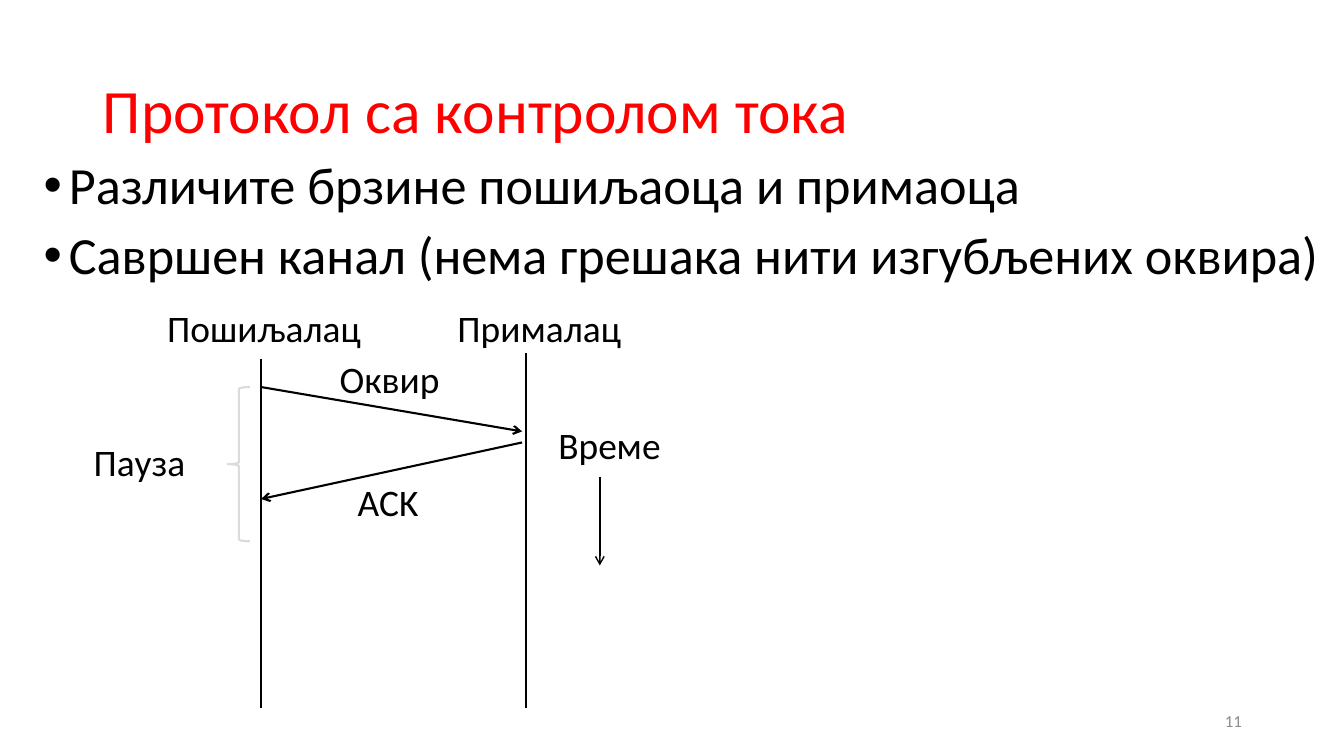
from dataclasses import dataclass

from lxml import etree
from pptx import Presentation
from pptx.dml.color import RGBColor
from pptx.enum.shapes import MSO_CONNECTOR, MSO_SHAPE
from pptx.enum.text import MSO_ANCHOR, MSO_AUTO_SIZE, PP_ALIGN
from pptx.oxml.ns import qn
from pptx.util import Emu, Inches, Pt

STRAIGHT = MSO_CONNECTOR.STRAIGHT
LEFT_BRACE = MSO_SHAPE.LEFT_BRACE
TOP, MIDDLE = MSO_ANCHOR.TOP, MSO_ANCHOR.MIDDLE
LEFT, RIGHT = PP_ALIGN.LEFT, PP_ALIGN.RIGHT
NO_AUTOFIT = MSO_AUTO_SIZE.NONE
SLIDE_WIDTH, SLIDE_HEIGHT = Inches(13.333), Inches(7.5)


@dataclass(frozen=True)
class Theme:
    font: str = "Calibri"
    title_color: RGBColor = RGBColor(0xFF, 0x00, 0x00)
    ink: RGBColor = RGBColor(0x00, 0x00, 0x00)
    brace_color: RGBColor = RGBColor(0xDB, 0xDB, 0xDB)
    number_color: RGBColor = RGBColor(0x8C, 0x8C, 0x8C)
    title_size: float = 44
    body_size: float = 37.3
    label_size: float = 26.7
    number_size: float = 12
    thin: float = 1
    thick: float = 1.5


THEME = Theme()


# Boxes and points are given in percent of the slide's width and height
@dataclass(frozen=True)
class Box:
    left: float
    top: float
    width: float
    height: float


@dataclass(frozen=True)
class Label:
    text: str
    left: float
    top: float
    width: float


@dataclass(frozen=True)
class Line:
    start: tuple[float, float]
    end: tuple[float, float]
    weight: float
    arrow: bool = False


TITLE = "Протокол са контролом тока"
BULLETS = [
    "Различите брзине пошиљаоца и примаоца",
    "Савршен канал (нема грешака нити изгубљених оквира)",
]
TITLE_BOX = Box(6.9, 5.33, 86.25, 19.33)
BODY_BOX = Box(2.5, 20.4, 97.5, 69.6)
NUMBER_BOX = Box(70.65, 92.67, 22.5, 5.33)

SENDER, RECEIVER, RECEIVER_EDGE, TIME_AXIS = 19.43, 39.15, 38.85, 44.63
FRAME_SENT, LIFELINE_END = 51.2, 93.6
HEADING_TOP, LABEL_HEIGHT = 39.73, 7.33
PAUSE_BOX = Box(16.95, FRAME_SENT, 1.65, 20.4)

LINES = [
    Line((SENDER, 47.47), (SENDER, LIFELINE_END), THEME.thin),
    Line((RECEIVER, 46.67), (RECEIVER, LIFELINE_END), THEME.thin),
    Line((SENDER, FRAME_SENT), (RECEIVER_EDGE, 57.07), THEME.thick, True),
    Line((RECEIVER_EDGE, 58.53), (SENDER, 66), THEME.thick, True),
    Line((TIME_AXIS, 63.07), (TIME_AXIS, 74.8), THEME.thin, True),
]
LABELS = [
    Label("Пошиљалац", 11.7, HEADING_TOP, 16.05),
    Label("Прималац", 33.3, HEADING_TOP, 13.8),
    Label("Оквир", 24.53, 46.4, 9),
    Label("ACK", 25.88, 62.67, 6.08),
    Label("Пауза", 6.23, 57.47, 8.4),
    Label("Време", 40.8, 55.2, 9.15),
]


def across(percent: float) -> Emu:
    return Emu(round(SLIDE_WIDTH * percent / 100))


def down(percent: float) -> Emu:
    return Emu(round(SLIDE_HEIGHT * percent / 100))


def place(box: Box) -> tuple[Emu, Emu, Emu, Emu]:
    return across(box.left), down(box.top), across(box.width), down(box.height)


def format_paragraph(paragraph, size: float, color: RGBColor, align=LEFT) -> None:
    paragraph.alignment = align
    paragraph.font.name = THEME.font
    paragraph.font.size = Pt(size)
    paragraph.font.color.rgb = color


def fill_placeholder(shape, box: Box, texts: list[str], size: float,
                     color: RGBColor, anchor) -> None:
    shape.left, shape.top, shape.width, shape.height = place(box)
    frame = shape.text_frame
    frame.text = "\n".join(texts)
    frame.auto_size = NO_AUTOFIT
    frame.vertical_anchor = anchor
    for paragraph in frame.paragraphs:
        format_paragraph(paragraph, size, color)
        paragraph.line_spacing = 0.9


def set_bullet(paragraph) -> None:
    paragraph.space_before = Pt(10)
    properties = paragraph._p.get_or_add_pPr()
    properties.set("marL", str(Inches(0.25)))
    properties.set("indent", str(-Inches(0.25)))
    bullet_font = etree.Element(qn("a:buFont"), typeface="Arial")
    bullet = etree.Element(qn("a:buChar"), char="•")
    defaults = properties.find(qn("a:defRPr"))
    defaults.addprevious(bullet_font)
    defaults.addprevious(bullet)


def add_text(slide, text: str, box: Box, size: float, color: RGBColor,
             align=LEFT, anchor=TOP, wrap: bool = False) -> None:
    frame = slide.shapes.add_textbox(*place(box)).text_frame
    frame.word_wrap = wrap
    frame.vertical_anchor = anchor
    frame.text = text
    format_paragraph(frame.paragraphs[0], size, color, align)


def add_line(slide, line: Line) -> None:
    (x1, y1), (x2, y2) = line.start, line.end
    connector = slide.shapes.add_connector(
        STRAIGHT, across(x1), down(y1), across(x2), down(y2))
    connector.line.color.rgb = THEME.ink
    connector.line.width = Pt(line.weight)
    if line.arrow:
        etree.SubElement(connector.line._get_or_add_ln(), qn("a:tailEnd"), type="arrow")
    etree.SubElement(connector._element.spPr, qn("a:effectLst"))


def add_pause_brace(slide) -> None:
    brace = slide.shapes.add_shape(LEFT_BRACE, *place(PAUSE_BOX))
    brace.shadow.inherit = False
    brace.fill.background()
    brace.line.color.rgb = THEME.brace_color
    brace.line.width = Pt(THEME.thick)


def main() -> None:
    presentation = Presentation()
    presentation.slide_width, presentation.slide_height = SLIDE_WIDTH, SLIDE_HEIGHT
    slide = presentation.slides.add_slide(presentation.slide_layouts[1])

    # Title and bullets
    fill_placeholder(slide.shapes.title, TITLE_BOX, [TITLE],
                     THEME.title_size, THEME.title_color, MIDDLE)
    body = slide.placeholders[1]
    fill_placeholder(body, BODY_BOX, BULLETS, THEME.body_size, THEME.ink, TOP)
    for paragraph in body.text_frame.paragraphs:
        set_bullet(paragraph)

    # Sequence diagram
    for line in LINES:
        add_line(slide, line)
    add_pause_brace(slide)
    for label in LABELS:
        box = Box(label.left, label.top, label.width, LABEL_HEIGHT)
        add_text(slide, label.text, box, THEME.label_size, THEME.ink)

    # Slide number
    add_text(slide, "11", NUMBER_BOX, THEME.number_size, THEME.number_color,
             RIGHT, MIDDLE, wrap=True)

    presentation.save("out.pptx")


if __name__ == "__main__":
    main()
